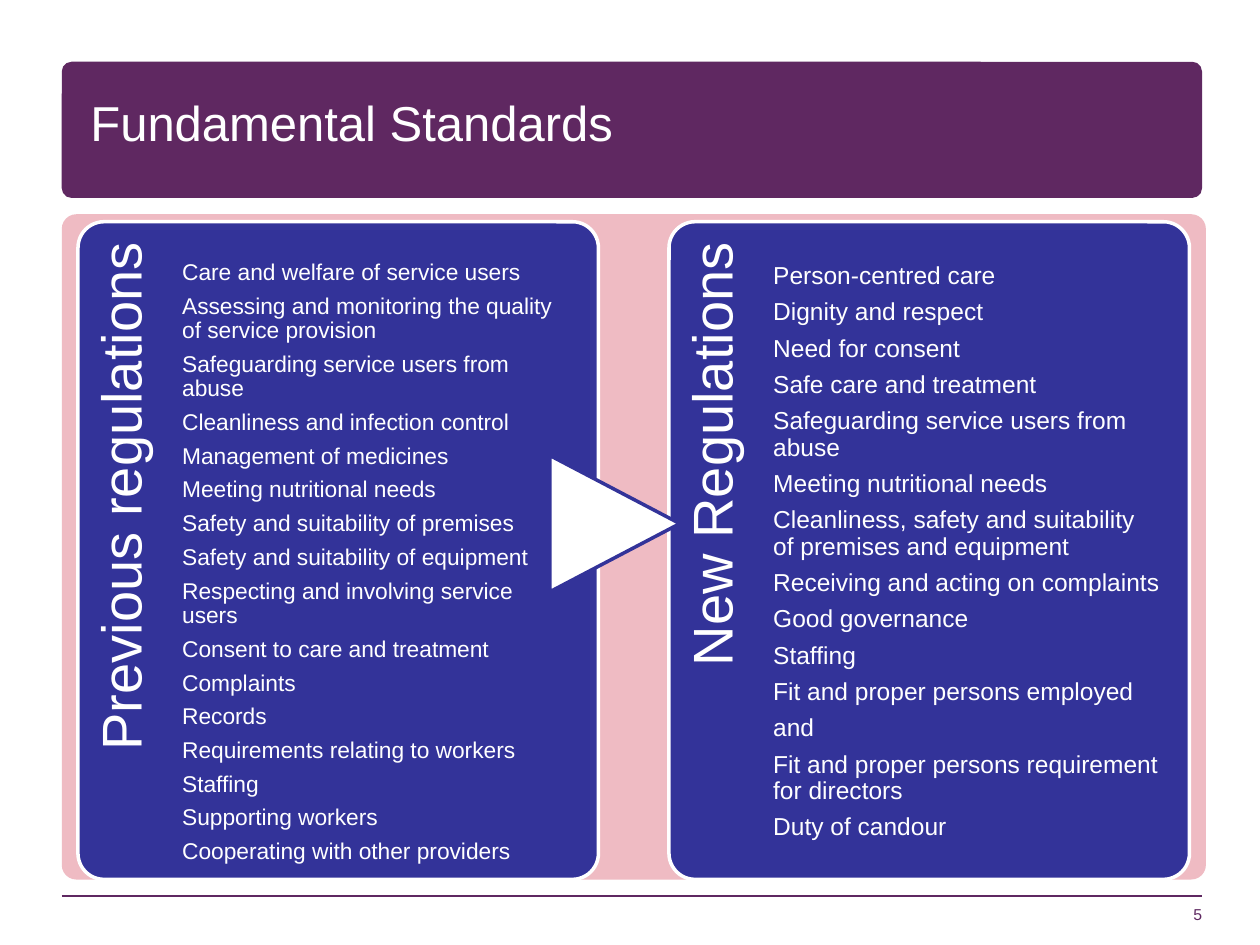
from lxml.etree import SubElement
from pptx import Presentation
from pptx.dml.color import RGBColor
from pptx.enum.shapes import MSO_CONNECTOR, MSO_SHAPE
from pptx.enum.text import MSO_ANCHOR, PP_ALIGN
from pptx.oxml.ns import qn
from pptx.util import Pt

PURPLE = RGBColor(0x5F, 0x28, 0x61)
PINK = RGBColor(0xEF, 0xBB, 0xC3)
INDIGO = RGBColor(0x33, 0x33, 0x99)
WHITE = RGBColor(0xFF, 0xFF, 0xFF)

PANEL_TOP, PANEL_WIDTH, PANEL_HEIGHT = 126.7, 297.4, 375.8

PREVIOUS = [
    "Care and welfare of service users",
    "Assessing and monitoring the quality of service provision",
    "Safeguarding service users from abuse",
    "Cleanliness and infection control",
    "Management of medicines",
    "Meeting nutritional needs",
    "Safety and suitability of premises",
    "Safety and suitability of equipment",
    "Respecting and involving service users",
    "Consent to care and treatment",
    "Complaints",
    "Records",
    "Requirements relating to workers",
    "Staffing",
    "Supporting workers",
    "Cooperating with other providers",
]
NEW = [
    "Person-centred care",
    "Dignity and respect",
    "Need for consent",
    "Safe care and treatment",
    "Safeguarding service users from abuse",
    "Meeting nutritional needs",
    "Cleanliness, safety and suitability of premises and equipment",
    "Receiving and acting on complaints",
    "Good governance",
    "Staffing",
    "Fit and proper persons employed",
    "and",
    "Fit and proper persons requirement for directors",
    "Duty of candour",
]


def add_text(page, lines, left, top, width, height, *, size, color=WHITE,
             align=PP_ALIGN.LEFT, anchor=MSO_ANCHOR.TOP, spacing=0.9,
             after=0, insets=(0, 0, 0, 0), rotation=0):
    """Add one paragraph per line; insets run left, top, right, bottom."""
    box = page.shapes.add_textbox(Pt(left), Pt(top), Pt(width), Pt(height))
    box.rotation = rotation
    frame = box.text_frame
    frame.word_wrap = True
    frame.vertical_anchor = anchor
    (frame.margin_left, frame.margin_top,
     frame.margin_right, frame.margin_bottom) = map(Pt, insets)
    for index, line in enumerate(lines):
        para = frame.paragraphs[0] if index == 0 else frame.add_paragraph()
        para.alignment = align
        para.line_spacing = spacing
        para.space_after = Pt(after)
        span = para.add_run()
        span.text = line
        span.font.name = "Arial"
        span.font.size = Pt(size)
        span.font.color.rgb = color


def add_block(page, kind, left, top, width, height, fill, outline=None, corner=None):
    block = page.shapes.add_shape(kind, Pt(left), Pt(top), Pt(width), Pt(height))
    block.shadow.inherit = False
    block.fill.solid()
    block.fill.fore_color.rgb = fill
    if outline is None:
        block.line.fill.background()
    else:
        block.line.color.rgb = outline
        block.line.width = Pt(2)
    if corner is not None:
        block.adjustments[0] = corner
    return block


def add_rule(page, left, right, y):
    rule = page.shapes.add_connector(
        MSO_CONNECTOR.STRAIGHT, Pt(left), Pt(y), Pt(right), Pt(y))
    rule.line.color.rgb = PURPLE
    rule.line.width = Pt(1)
    SubElement(rule.element.spPr, qn("a:effectLst"))


def add_panel(page, left):
    add_block(page, MSO_SHAPE.ROUNDED_RECTANGLE, left, PANEL_TOP,
              PANEL_WIDTH, PANEL_HEIGHT, INDIGO, WHITE, 0.05)


def add_panel_heading(page, left, heading):
    """Add the heading that reads upwards along the panel's left side."""
    length, depth = 308.2, 59.8
    add_text(page, [heading], left + 30 - length / 2, 251.3, length, depth,
             size=32, align=PP_ALIGN.RIGHT, insets=(0, 8.6, 11.5, 0), rotation=270)


def add_panel_list(page, left, items, size):
    """Add the list, starting one line of its own text below the panel top."""
    add_text(page, items, left + 59.5, PANEL_TOP, 221.8, PANEL_HEIGHT, size=size,
             after=0.4 * size, insets=(0, 3.6 + 1.435 * size, 0, 0))


def main():
    deck = Presentation()
    deck.slide_width, deck.slide_height = Pt(720), Pt(540)
    page = deck.slides.add_slide(deck.slide_layouts[6])

    rounded = MSO_SHAPE.ROUNDED_RECTANGLE
    add_block(page, rounded, 35.3, 35.3, 651.6, 77.8, PURPLE, corner=0.072)
    add_rule(page, 35.3, 686.9, 511.9)
    add_block(page, rounded, 35.3, 122.4, 653.8, 380.2, PINK, corner=0.022)
    add_text(page, ["5"], 537.1, 491.8, 149.8, 36, size=9, color=PURPLE,
             align=PP_ALIGN.RIGHT, anchor=MSO_ANCHOR.BOTTOM, spacing=1.0)
    add_text(page, ["Fundamental Standards"], 44.6, 54.7, 459.4, 50.4, size=28,
             spacing=0.85, insets=(7.2, 3.6, 7.2, 3.6))

    panels = [
        (44.6, "Previous regulations", PREVIOUS, 13),
        (382.3, "New Regulations", NEW, 14),
    ]
    for left, heading, items, size in panels:
        add_panel(page, left)
        add_panel_heading(page, left, heading)
        add_panel_list(page, left, items, size)

    pointer = add_block(page, MSO_SHAPE.FLOWCHART_EXTRACT,
                        312.5, 262.1, 77.8, 74.2, WHITE, INDIGO)
    pointer.rotation = 90

    deck.save("out.pptx")


if __name__ == "__main__":
    main()
